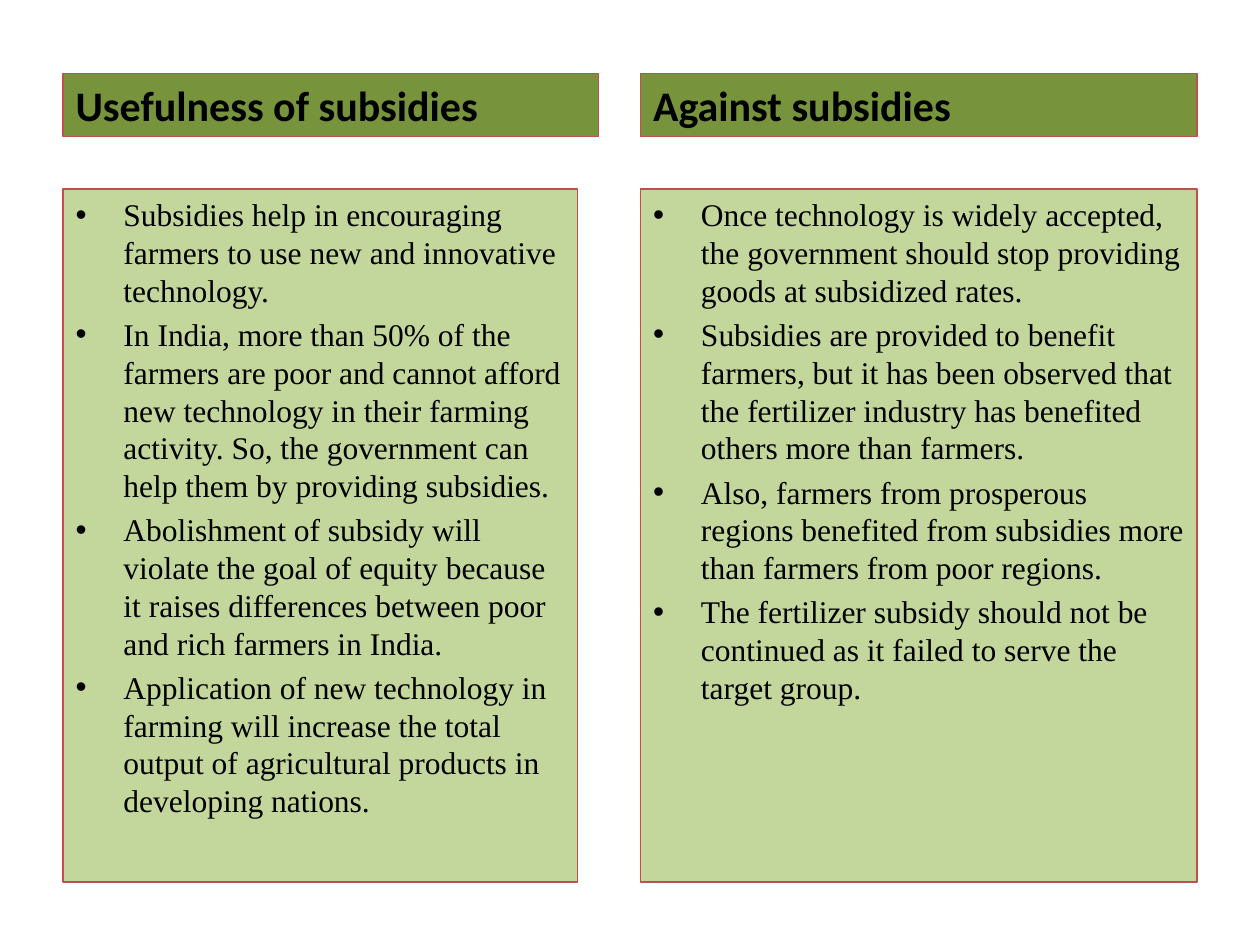
from pptx import Presentation
from pptx.dml.color import RGBColor
from pptx.enum.text import MSO_ANCHOR, MSO_AUTO_SIZE
from pptx.util import Inches, Pt

BLACK = RGBColor(0x00, 0x00, 0x00)
RED = RGBColor(0xC0, 0x50, 0x4D)
DARK = RGBColor(0x77, 0x93, 0x3C)
LIGHT = RGBColor(0xC3, 0xD6, 0x9B)

# Formats for the two kinds of box
HEAD = {"name": "Calibri", "size": Pt(24), "bold": True}
BODY = {"name": "Times New Roman", "size": Pt(18), "bold": False}

# Each side: left column, head width, body width, heading, points
SIDES = [
    (6, 51, 49, "Usefulness of subsidies", [
        "Subsidies help in encouraging farmers to use new and innovative technology.",
        "In India, more than 50% of the farmers are poor and cannot afford new technology "
        "in their farming activity. So, the government can help them by providing subsidies.",
        "Abolishment of subsidy will violate the goal of equity because it raises "
        "differences between poor and rich farmers in India.",
        "Application of new technology in farming will increase the total output of "
        "agricultural products in developing nations.",
    ]),
    (61, 53, 53, "Against subsidies", [
        "Once technology is widely accepted, the government should stop providing goods "
        "at subsidized rates.",
        "Subsidies are provided to benefit farmers, but it has been observed that the "
        "fertilizer industry has benefited others more than farmers.",
        "Also, farmers from prosperous regions benefited from subsidies more than farmers "
        "from poor regions.",
        "The fertilizer subsidy should not be continued as it failed to serve the target group.",
    ]),
]

deck = Presentation()
deck.slide_width, deck.slide_height = Inches(10), Inches(7.5)
UNIT = deck.slide_width // 120  # grid of 120 columns by 90 rows

# Comparison layout: a heading and a list on each side, no title
slide = deck.slides.add_slide(deck.slide_layouts[4])
title = slide.shapes.title._element
title.getparent().remove(title)
boxes = {box.placeholder_format.idx: box for box in slide.placeholders}


def fill_box(box, place, color, anchor, lines, style):
    """Place and color a box, then write its lines."""
    for key, cells in zip(("left", "top", "width", "height"), place):
        setattr(box, key, cells * UNIT)
    box.fill.solid()
    box.fill.fore_color.rgb = color
    box.line.color.rgb = RED
    box.line.width = Pt(0.75)
    frame = box.text_frame
    frame.text = "\n".join(lines)
    frame.word_wrap = True
    frame.auto_size = MSO_AUTO_SIZE.NONE
    frame.vertical_anchor = anchor
    for para in frame.paragraphs:
        font = para.runs[0].font
        for key, value in style.items():
            setattr(font, key, value)
        font.color.rgb = BLACK


for side, (left, wide, slim, head, points) in enumerate(SIDES):
    # Heading bar
    fill_box(boxes[2 * side + 1], (left, 7, wide, 6), DARK, MSO_ANCHOR.BOTTOM, [head], HEAD)

    # Bulleted list, with the layout's own bullet
    panel = boxes[2 * side + 2]
    fill_box(panel, (left, 18, slim, 66), LIGHT, MSO_ANCHOR.TOP, points, BODY)
    for para in panel.text_frame.paragraphs:
        props = para._p.get_or_add_pPr()
        props.set("marL", str(Inches(0.38)))
        props.set("indent", str(-Inches(0.38)))

deck.save("out.pptx")
